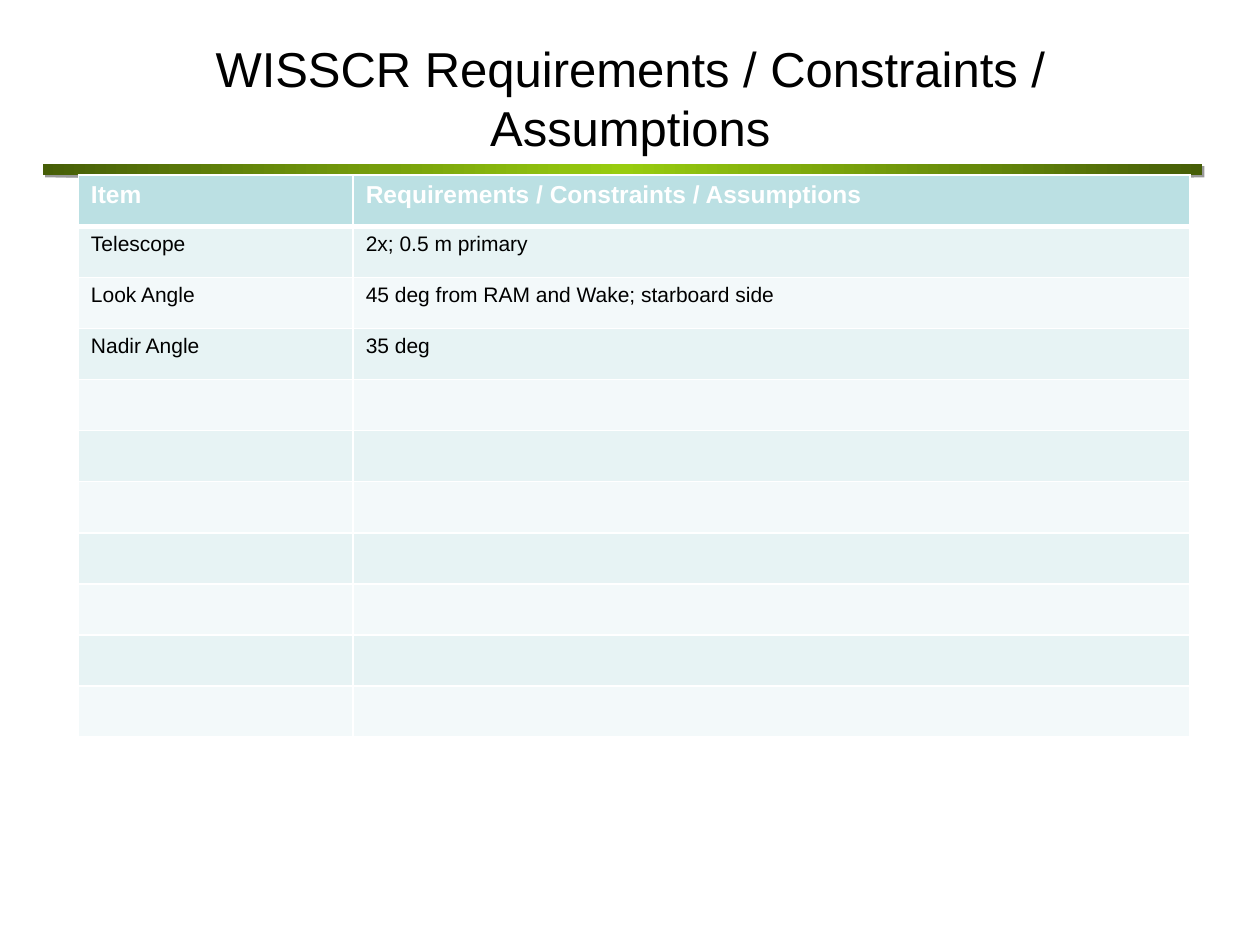
"""Build the WISSCR requirements, constraints and assumptions slide."""
from copy import deepcopy

from pptx import Presentation
from pptx.dml.color import RGBColor
from pptx.enum.shapes import MSO_SHAPE
from pptx.enum.text import MSO_ANCHOR, MSO_AUTO_SIZE, PP_ALIGN
from pptx.oxml import parse_xml
from pptx.oxml.ns import nsdecls, qn
from pptx.util import Cm, Pt

COLORS = {
    "text": "000000", "white": "FFFFFF", "header": "BBE0E3",
    "odd": "E7F3F4", "even": "F3F9FA",
    "dark_green": "465E07", "light_green": "98CC0F", "shadow": "808080",
}
RGB = {key: RGBColor.from_string(value) for key, value in COLORS.items()}
HEADING = "Requirements / Constraints / Assumptions"
ROW_COUNT = 11
ROW_HEIGHT = Cm(1.03)
COLUMN_WIDTHS = [Cm(5.54), Cm(16.87)]
REQUIREMENTS = [
    ("Item", HEADING),
    ("Telescope", "2x; 0.5 m primary"),
    ("Look Angle", "45 deg from RAM and Wake; starboard side"),
    ("Nadir Angle", "35 deg"),
]


def format_run(run, color, **values):
    for name, value in {"name": "Arial", **values}.items():
        setattr(run.font, name, value)
    run.font.color.rgb = RGB[color]


def add_borders(cell, widths):
    properties = cell._tc.get_or_add_tcPr()
    for side, width in widths.items():
        properties.append(parse_xml(
            f'<a:ln{side} {nsdecls("a")} w="{Pt(width)}"><a:solidFill>'
            f'<a:srgbClr val="{COLORS["white"]}"/></a:solidFill></a:ln{side}>'))


prs = Presentation()
prs.slide_width, prs.slide_height = Cm(25.4), Cm(19.05)
slide = prs.slides.add_slide(prs.slide_layouts[5])

title = slide.shapes.title
title.left, title.top, title.width, title.height = Cm(3.18), Cm(0.91), Cm(19.05), Cm(2.11)
title_frame = title.text_frame
title_format = {"word_wrap": True, "auto_size": MSO_AUTO_SIZE.NONE,
                "vertical_anchor": MSO_ANCHOR.MIDDLE}
for name, value in title_format.items():
    setattr(title_frame, name, value)
title_frame.text = f"WISSCR {HEADING}"
title_frame.paragraphs[0].alignment = PP_ALIGN.CENTER
format_run(title_frame.paragraphs[0].runs[0], "text", size=Pt(28))

divider = slide.shapes.add_shape(MSO_SHAPE.RECTANGLE, Cm(0.86), Cm(3.3), Cm(23.37), Cm(0.23))
divider.line.fill.background()
divider.fill.gradient()
divider.fill.gradient_angle = 0
stop_list = divider.element.spPr.find(f".//{qn('a:gsLst')}")
stop_list.append(deepcopy(stop_list[0]))
stop_colors = ["dark_green", "light_green", "dark_green"]
for index, (stop, color) in enumerate(zip(divider.fill.gradient_stops, stop_colors)):
    stop.position = index / 2
    stop.color.rgb = RGB[color]
divider.shadow.inherit = False
divider.element.spPr.find(qn("a:effectLst")).append(parse_xml(
    f'<a:outerShdw {nsdecls("a")} dist="{Pt(2)}" dir="2700000" algn="ctr" rotWithShape="0">'
    f'<a:srgbClr val="{COLORS["shadow"]}"><a:alpha val="80000"/></a:srgbClr></a:outerShdw>'))

requirements = slide.shapes.add_table(
    ROW_COUNT, len(COLUMN_WIDTHS), Cm(1.58), Cm(3.53),
    sum(COLUMN_WIDTHS), ROW_HEIGHT * ROW_COUNT).table
for column, width in zip(requirements.columns, COLUMN_WIDTHS):
    column.width = width
for row_index, row in enumerate(requirements.rows):
    row.height = ROW_HEIGHT
    is_header = row_index == 0
    fill = "header" if is_header else ("even", "odd")[row_index % 2]
    borders = {"L": 1, "R": 1, "T": 3 if row_index == 1 else 1, "B": 3 if is_header else 1}
    for column_index, cell in enumerate(row.cells):
        add_borders(cell, borders)
        cell.fill.solid()
        cell.fill.fore_color.rgb = RGB[fill]
        if row_index < len(REQUIREMENTS):
            cell.text = REQUIREMENTS[row_index][column_index]
            format_run(cell.text_frame.paragraphs[0].runs[0],
                       "white" if is_header else "text",
                       size=Pt(14 if is_header else 12), bold=is_header)

prs.save("out.pptx")
